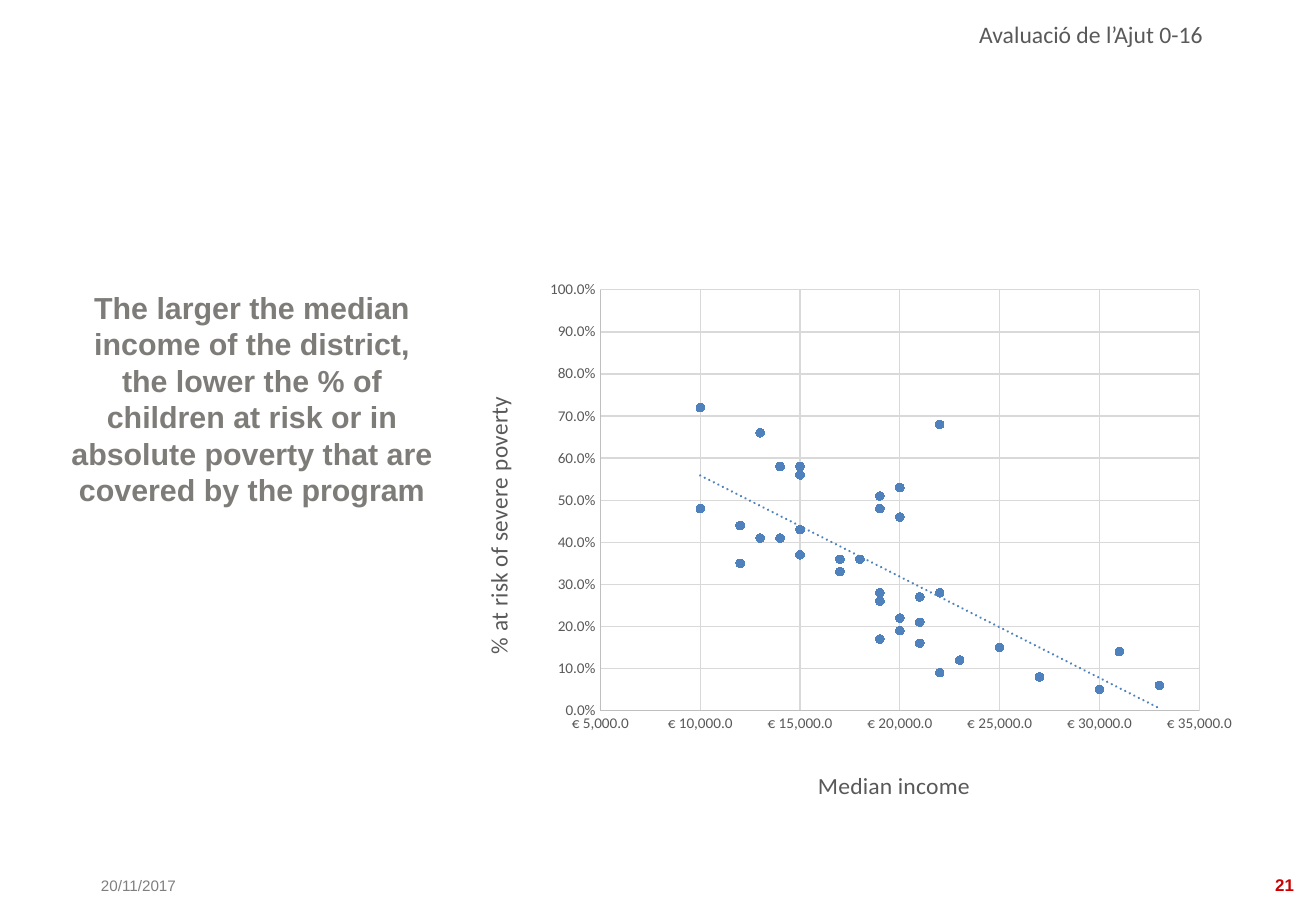
from dataclasses import dataclass

from lxml.etree import SubElement
from pptx import Presentation
from pptx.chart.data import XyChartData
from pptx.dml.color import RGBColor
from pptx.enum.chart import XL_CHART_TYPE as ChartType
from pptx.enum.chart import XL_MARKER_STYLE as MarkerStyle
from pptx.enum.chart import XL_TICK_MARK as TickMark
from pptx.enum.text import MSO_ANCHOR as Anchor
from pptx.enum.text import MSO_AUTO_SIZE as AutoSize
from pptx.enum.text import PP_ALIGN as Align
from pptx.oxml import parse_xml
from pptx.oxml.ns import nsdecls, qn
from pptx.util import Pt

PX = 7526

DISTRICTS = [
    (10000, 0.48), (12000, 0.35), (13000, 0.41), (12000, 0.44), (21000, 0.16),
    (20000, 0.22), (23000, 0.12), (22000, 0.09), (21000, 0.21), (19000, 0.26),
    (14000, 0.41), (15000, 0.37), (19000, 0.28), (18000, 0.36), (25000, 0.15),
    (22000, 0.28), (33000, 0.06), (None, None), (31000, 0.14), (27000, 0.08),
    (30000, 0.05), (21000, 0.27), (19000, 0.17), (22000, 0.68), (19000, 0.51),
    (15000, 0.43), (17000, 0.36), (20000, 0.53), (15000, 0.43), (15000, 0.56),
    (13000, 0.66), (10000, 0.72), (14000, 0.58), (20000, 0.46), (19000, 0.48),
    (19000, 0.26), (22000, 0.28), (20000, 0.19), (15000, 0.58), (17000, 0.33),
]


@dataclass(frozen=True)
class Theme:
    heading_font: str = "Arial"
    chart_font: str = "Calibri"
    message: str = "7E7C78"
    label: str = "595959"
    date: str = "7F7F7F"
    number: str = "CC0000"
    series: str = "4F81BD"
    axis: str = "BFBFBF"
    grid: str = "D9D9D9"
    message_size: int = 18
    label_size: int = 14
    number_size: int = 10
    small_size: int = 9


def assign(target, **values):
    for attribute, value in values.items():
        setattr(target, attribute, value)


def place(px_box):
    return [length * PX for length in px_box]


class SlideBuilder:
    def __init__(self, presentation, theme):
        self.theme = theme
        self.slide = presentation.slides.add_slide(presentation.slide_layouts[5])

    def style_font(self, font, name, size, color, bold=False):
        assign(font, name=name, size=Pt(size), bold=bold)
        font.color.rgb = RGBColor.from_string(color)

    def style_line(self, line, color, width=0.75):
        line.color.rgb = RGBColor.from_string(color)
        line.width = Pt(width)

    def fill_text(self, shape, text, font, align, anchor, margins):
        left, top, right, bottom = place(margins)
        frame = shape.text_frame
        assign(frame, word_wrap=True, auto_size=AutoSize.NONE, vertical_anchor=anchor,
               margin_left=left, margin_top=top, margin_right=right, margin_bottom=bottom)
        paragraph = frame.paragraphs[0]
        paragraph.text = text
        paragraph.alignment = align
        self.style_font(paragraph.font, *font)

    def title(self, text, box, font):
        title = self.slide.shapes.title
        left, top, width, height = place(box)
        assign(title, left=left, top=top, width=width, height=height)
        self.fill_text(title, text, font, Align.CENTER, Anchor.TOP, (5, 5, 5, 5))

    def label(self, text, box, font, align=Align.LEFT, margins=(0, 6, 12, 6)):
        label = self.slide.shapes.add_textbox(*place(box))
        self.fill_text(label, text, font, align, Anchor.BOTTOM, margins)

    def set_layout(self, element, index, **fractions):
        existing = element.find(qn("c:layout"))
        if existing is not None:
            element.remove(existing)
        layout = parse_xml(f"<c:layout {nsdecls('c')}><c:manualLayout/></c:layout>")
        for tag, value in fractions.items():
            SubElement(layout[0], qn(f"c:{tag}")).set("val", str(value))
        element.insert(index, layout)

    def axis(self, axis, title, limits, step, number_format, title_at):
        theme = self.theme
        low, high = limits
        assign(axis, minimum_scale=low, maximum_scale=high, major_unit=step,
               major_tick_mark=TickMark.NONE, minor_tick_mark=TickMark.NONE,
               has_major_gridlines=True)
        assign(axis.tick_labels, number_format=number_format, number_format_is_linked=False)
        self.style_font(axis.tick_labels.font, theme.chart_font, theme.small_size, theme.label)
        self.style_line(axis.format.line, theme.axis)
        self.style_line(axis.major_gridlines.format.line, theme.grid)
        paragraph = axis.axis_title.text_frame.paragraphs[0]
        paragraph.text = title
        self.style_font(paragraph.runs[0].font, theme.chart_font, theme.label_size, theme.label)
        x, y = title_at
        self.set_layout(axis.axis_title._element, 1, xMode="edge", yMode="edge", x=x, y=y)

    def trend_line(self, series):
        series._element.find(qn("c:xVal")).addprevious(parse_xml(
            f"<c:trendline {nsdecls('c', 'a')}><c:spPr>"
            f'<a:ln w="{Pt(1.5)}" cap="rnd"><a:solidFill><a:srgbClr val="{self.theme.series}"/>'
            '</a:solidFill><a:prstDash val="sysDot"/></a:ln></c:spPr>'
            '<c:trendlineType val="linear"/><c:dispRSqr val="0"/><c:dispEq val="0"/>'
            "</c:trendline>"))

    def drop_missing(self, series):
        for point in list(series._element.iter(qn("c:pt"))):
            if point.findtext(qn("c:v")) == "None":
                point.getparent().remove(point)

    def scatter(self, points, box):
        theme = self.theme
        data = XyChartData()
        districts = data.add_series("Series 1")
        for income, poverty in points:
            districts.add_data_point(income, poverty)
        chart = self.slide.shapes.add_chart(ChartType.XY_SCATTER, *place(box), data).chart
        assign(chart, has_title=False, has_legend=False)
        self.style_font(chart.font, theme.chart_font, theme.number_size, theme.label)
        plot = chart.plots[0]
        plot.vary_by_categories = False
        series = plot.series[0]
        self.drop_missing(series)
        series.format.line.fill.background()
        assign(series.marker, style=MarkerStyle.CIRCLE, size=5)
        series.marker.format.fill.solid()
        series.marker.format.fill.fore_color.rgb = RGBColor.from_string(theme.series)
        self.style_line(series.marker.format.line, theme.series)
        self.trend_line(series)
        self.axis(chart.category_axis, "Median income", (5000, 35000), 5000,
                  '"€" #,##0.0', (0.44, 0.94))
        self.axis(chart.value_axis, "% at risk of severe poverty", (0, 1), 0.1,
                  "0.0%", (0.01, 0.24))
        rotated = chart.value_axis.axis_title._element.find(".//" + qn("a:bodyPr"))
        rotated.set("rot", "-5400000")
        rotated.set("vert", "horz")
        plot_area = chart._chartSpace.find(".//" + qn("c:plotArea"))
        self.set_layout(plot_area, 0, layoutTarget="inner", xMode="edge", yMode="edge",
                        x=0.167, y=0.036, w=0.767, h=0.8)


def main():
    theme = Theme()
    presentation = Presentation()
    assign(presentation, slide_width=1316 * PX, slide_height=911 * PX)
    builder = SlideBuilder(presentation, theme)
    builder.label("20/11/2017", (101, 872, 112, 29),
                  (theme.heading_font, theme.small_size, theme.date))
    builder.label("21", (1245, 871, 61, 30),
                  (theme.heading_font, theme.number_size, theme.number, True), Align.RIGHT)
    builder.label("Avaluació de l’Ajut 0-16", (385, 30, 830, 26),
                  (theme.chart_font, theme.label_size, theme.label), Align.RIGHT,
                  (12, 6, 12, 8))
    builder.title("The larger the median income of the district, the lower the % of children "
                  "at risk or in absolute poverty that are covered by the program",
                  (65, 284, 374, 130),
                  (theme.heading_font, theme.message_size, theme.message, True))
    builder.scatter(DISTRICTS, (470, 271, 781, 537))
    presentation.save("out.pptx")


if __name__ == "__main__":
    main()
